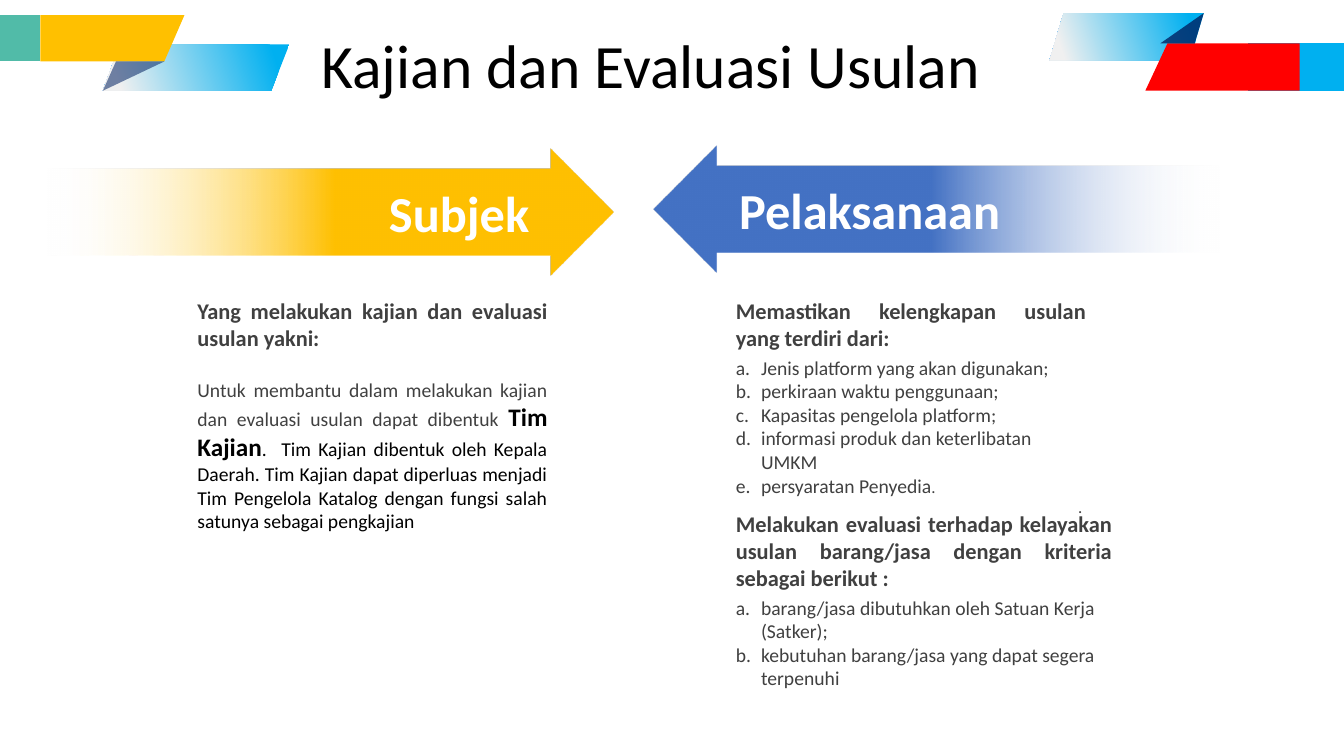
import pptx
import pptx.util
import pptx.dml.color
import pptx.enum.shapes
import pptx.enum.text
import pptx.oxml
import pptx.oxml.ns
from lxml import etree

Inches = pptx.util.Inches
ALIGN = pptx.enum.text.PP_ALIGN
ANCHOR = pptx.enum.text.MSO_ANCHOR
A = pptx.oxml.ns.nsdecls("a")
GRAY = "404040"
SKY_FADE = [(9, "00B0F0", 100), (91, "F0F0F0", 100)]


def rgb(color):
    return pptx.dml.color.RGBColor.from_string(color)


def fill_solid(sp, color, alpha=100):
    sp.shadow.inherit = False
    sp.line.fill.background()
    sp.fill.solid()
    sp.fill.fore_color.rgb = rgb(color)
    if alpha < 100:
        clr = sp.fill._xPr.find(".//" + pptx.oxml.ns.qn("a:srgbClr"))
        etree.SubElement(clr, pptx.oxml.ns.qn("a:alpha"), val=str(alpha * 1000))


def fill_gradient(sp, stops, angle):
    fill_solid(sp, "FFFFFF")
    gs = "".join(
        f'<a:gs pos="{pos * 1000}"><a:srgbClr val="{color}">'
        f'<a:alpha val="{alpha * 1000}"/></a:srgbClr></a:gs>'
        for pos, color, alpha in stops)
    grad = pptx.oxml.parse_xml(
        f'<a:gradFill {A} rotWithShape="1"><a:gsLst>{gs}</a:gsLst>'
        f'<a:lin ang="{angle * 60000}" scaled="0"/></a:gradFill>')
    solid = sp._element.spPr.find(pptx.oxml.ns.qn("a:solidFill"))
    solid.getparent().replace(solid, grad)


def add_text(s, box, paragraphs, size=14, color=GRAY, bold=False, align=None,
             anchor=ANCHOR.TOP, inset=True, spacing=None, lettered=False):
    """Each paragraph is a string or a list of (text, size, color, bold) runs."""
    tb = s.shapes.add_textbox(*[Inches(v) for v in box])
    tf = tb.text_frame
    tf.word_wrap = True
    tf.vertical_anchor = anchor
    if not inset:
        tf.margin_left = tf.margin_right = tf.margin_top = tf.margin_bottom = 0
    for i, runs in enumerate(paragraphs):
        p = tf.paragraphs[0] if i == 0 else tf.add_paragraph()
        p.alignment = align
        if spacing:
            p.line_spacing = spacing
        if isinstance(runs, str):
            runs = [(runs, size, color, bold)]
        for text, r_size, r_color, r_bold in runs:
            r = p.add_run()
            r.text = text
            r.font.name = "Calibri"
            r.font.size = pptx.util.Pt(r_size)
            r.font.bold = r_bold
            r.font.color.rgb = rgb(r_color)
        if lettered:
            pPr = p._p.get_or_add_pPr()
            pPr.set("marL", str(Inches(0.25)))
            pPr.set("indent", str(-Inches(0.25)))
            pPr.append(pptx.oxml.parse_xml(
                f'<a:buAutoNum {A} type="alphaLcPeriod"/>'))
    return tf


def add_polygon(s, x, y, points):
    pts = [(Inches(x + dx), Inches(y + dy)) for dx, dy in points]
    fb = s.shapes.build_freeform(*pts[0])
    fb.add_line_segments(pts[1:], close=True)
    return fb.convert_to_shape()


def add_right_ribbon(s, x, y):
    h, low = 0.47, 0.3
    end = add_polygon(s, x + 1.97, y + low, [(0, 0), (0.95, 0), (0.95, h), (0, h)])
    fill_solid(end, "00B0F0")
    back = add_polygon(s, x, y, [(0.14, 0), (1.53, 0), (1.39, h), (0, h)])
    fill_gradient(back, SKY_FADE, 161)
    front = add_polygon(s, x + 0.95, y + low, [(0.22, 0), (1.53, 0), (1.53, h), (0, h)])
    fill_solid(front, "FF0000")
    fold = add_polygon(s, x + 1.1, y, [(0, low), (0.34, low), (0.43, 0)])
    fill_solid(fold, "002060", 79)


def add_left_ribbon(s, x, y):
    h, low = 0.46, 0.29
    back = add_polygon(s, x + 1.1, y + low, [(0.17, 0), (1.85, 0), (1.67, h), (0, h)])
    fill_gradient(back, SKY_FADE, 161)
    front = add_polygon(s, x + 0.48, y, [(0, 0), (1.43, 0), (1.23, h), (0, h)])
    fill_solid(front, "FFC000")
    end = add_polygon(s, x, y, [(0, 0), (0.48, 0), (0.48, h), (0, h)])
    fill_solid(end, "51BBA8")
    fold = add_polygon(s, x + 1.1, y + h, [(0.61, 0), (0.13, 0), (0, low)])
    fill_solid(fold, "002060", 54)


def add_arrow(s, x, y, label, color, label_x, align, rotation=0):
    sp = s.shapes.add_shape(pptx.enum.shapes.MSO_SHAPE.RIGHT_ARROW,
                            Inches(x), Inches(y), Inches(5.98), Inches(1.26))
    sp.adjustments[0] = 0.682
    sp.adjustments[1] = 0.5
    sp.rotation = rotation
    fill_gradient(sp, [(46, color, 100), (94, "FFFFFF", 0)], 180)
    add_text(s, (x + label_x, y + 0.33, 3.39, 0.61), [label], size=36, bold=True,
             color="FFFFFF", align=align, anchor=ANCHOR.BOTTOM, inset=False)


def add_heading(s, box, text):
    add_text(s, box, [text], size=16, bold=True, align=ALIGN.JUSTIFY)


def add_subject(s, x, y, w):
    add_text(s, (x, y + 0.8, w, 1.65), [[
        ("Untuk membantu dalam melakukan kajian dan evaluasi usulan dapat dibentuk ",
         14, GRAY, False),
        ("Tim Kajian", 18, "000000", True),
        (".  Tim Kajian dibentuk oleh Kepala Daerah. Tim Kajian dapat diperluas "
         "menjadi Tim Pengelola Katalog dengan fungsi salah satunya sebagai "
         "pengkajian", 14, "000000", False)]], align=ALIGN.JUSTIFY)
    add_heading(s, (x, y, w, 0.64),
                "Yang melakukan kajian dan evaluasi usulan yakni:")


def add_execution(s, x, y, w):
    tf = add_text(s, (x, y + 0.58, w, 1.72), [
        "Jenis platform yang akan digunakan;",
        "perkiraan waktu penggunaan;",
        "Kapasitas pengelola platform;",
        "informasi produk dan keterlibatan UMKM",
        [("persyaratan Penyedia", 14, GRAY, False), (".", 12, GRAY, False)],
    ], lettered=True)
    # Closing full stop, right aligned below the list
    p = tf.add_paragraph()
    p.alignment = ALIGN.RIGHT
    r = p.add_run()
    r.text = ". "
    r.font.name = "Calibri"
    r.font.size = pptx.util.Pt(12)
    r.font.color.rgb = rgb(GRAY)
    add_heading(s, (x, y, w, 0.64),
                "Memastikan kelengkapan usulan yang terdiri dari: ")
    add_text(s, (x, y + 2.96, 4.16, 1.04), [
        "barang/jasa dibutuhkan oleh Satuan Kerja (Satker);",
        "kebutuhan barang/jasa yang dapat segera terpenuhi"], lettered=True)
    add_heading(s, (x, y + 2.11, 3.93, 0.91),
                "Melakukan evaluasi terhadap kelayakan usulan barang/jasa "
                "dengan kriteria sebagai berikut : ")


def main():
    prs = pptx.Presentation()
    prs.slide_width, prs.slide_height = Inches(13.33), Inches(7.5)
    s = prs.slides.add_slide(prs.slide_layouts[6])

    # Title and ribbons
    add_text(s, (3.09, -0.05, 7.02, 1.45), ["Kajian dan Evaluasi Usulan"],
             size=44, color="000000", anchor=ANCHOR.MIDDLE, spacing=0.9)
    add_right_ribbon(s, 10.41, 0.13)
    add_left_ribbon(s, -0.08, 0.15)

    # Facing arrows
    add_arrow(s, 0.1, 1.47, "Subjek", "FFC000", 1.76, ALIGN.RIGHT)
    add_arrow(s, 6.48, 1.44, "Pelaksanaan", "4472C4", 0.85, ALIGN.LEFT, rotation=180)

    # Text columns
    add_subject(s, 1.86, 2.9, 3.67)
    add_execution(s, 7.2, 2.9, 3.67)
    prs.save("out.pptx")


if __name__ == "__main__":
    main()
